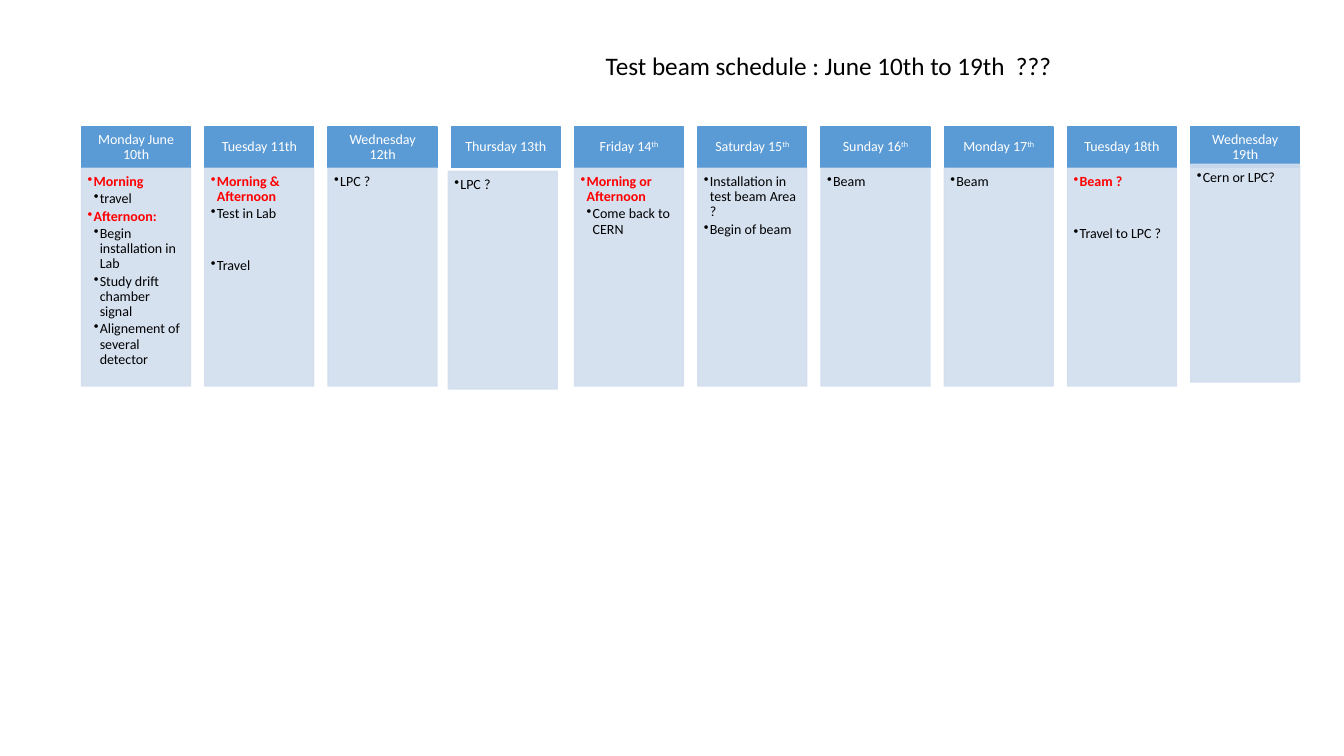
from lxml import etree
from pptx import Presentation
from pptx import util as u
from pptx.dml.color import RGBColor
from pptx.enum import shapes, text
from pptx.oxml import ns

COLORS = {"header": "5B9BD5", "body": "D2DEEF", "white": "FFFFFF",
          "black": "000000", "red": "FF0000"}
DAY_LEFT, DAY_PITCH, DAY_WIDTH = 0.81, 11 / 9, 1.08
HEADER_TOP, HEADER_HEIGHT = 1.26, 0.4
BODY_TOP, BODY_HEIGHT = 1.67, 2.16

SCHEDULE = [
    ("Monday June 10th", "", [
        ("Morning", {"heading": True}),
        ("travel", {"level": 2}),
        ("Afternoon:", {"heading": True}),
        ("Begin installation in Lab", {"level": 2}),
        ("Study drift chamber signal", {"level": 2}),
        ("Alignement of several detector", {"level": 2})]),
    ("Tuesday 11th", "", [
        ("Morning & Afternoon", {"heading": True}),
        ("Test in Lab", {}),
        ("Travel", {"before": 24.5})]),
    ("Wednesday 12th", "", [("LPC ?", {})]),
    ("Thursday 13th", "", [("LPC ?", {})]),
    ("Friday 14", "th", [
        ("Morning or Afternoon", {"heading": True}),
        ("Come back to CERN", {"level": 2})]),
    ("Saturday 15", "th", [
        ("Installation in test beam Area ?", {}),
        ("Begin of beam", {})]),
    ("Sunday 16", "th", [("Beam", {})]),
    ("Monday 17", "th", [("Beam", {})]),
    ("Tuesday 18th", "", [
        ("Beam ?", {"heading": True}),
        ("Travel to LPC ?", {"before": 24.5})]),
    ("Wednesday 19th", "", [("Cern or LPC?", {})]),
]
BODY_SHIFTS = {"Thursday 13th": (-0.03, 0.03), "Wednesday 19th": (0, -0.04)}


def write(paragraph, wording, size=10, color="black", bold=False, suffix="",
          align=text.PP_ALIGN.LEFT, spacing=0.9, before=0, after=1.6, level=0):
    paragraph.alignment = align
    paragraph.line_spacing = spacing
    paragraph.space_before = u.Pt(before)
    paragraph.space_after = u.Pt(after)
    for part in filter(None, (wording, suffix)):
        run = paragraph.add_run()
        run.text = part
        run.font.size = u.Pt(size)
        run.font.name = "Calibri"
        run.font.bold = bold
        run.font.color.rgb = RGBColor.from_string(COLORS[color])
        if part == suffix:
            run.font._element.set("baseline", "30000")
    if level:
        properties = paragraph._p.get_or_add_pPr()
        properties.set("marL", str(u.Inches(0.06 * level)))
        properties.set("indent", str(-u.Inches(0.06)))
        etree.SubElement(properties, ns.qn("a:buChar")).set("char", "••")


def add_box(group, left, top, height, color, margins, anchor):
    box = group.shapes.add_shape(
        shapes.MSO_SHAPE.RECTANGLE, u.Inches(left), u.Inches(top),
        u.Inches(DAY_WIDTH), u.Inches(height))
    box.shadow.inherit = False
    box.fill.solid()
    box.fill.fore_color.rgb = RGBColor.from_string(COLORS[color])
    box.line.color.rgb = RGBColor.from_string(COLORS[color])
    box.line.width = u.Pt(1)
    frame = box.text_frame
    frame.word_wrap = True
    frame.vertical_anchor = anchor
    (frame.margin_left, frame.margin_top,
     frame.margin_right, frame.margin_bottom) = map(u.Inches, margins)
    return box


deck = Presentation()
deck.slide_width, deck.slide_height = u.Inches(13.33), u.Inches(7.5)
slide = deck.slides.add_slide(deck.slide_layouts[6])
calendar = slide.shapes.add_group_shape()

for column, (day, ordinal, activities) in enumerate(SCHEDULE):
    left = DAY_LEFT + column * DAY_PITCH
    header = add_box(calendar, left, HEADER_TOP, HEADER_HEIGHT, "header",
                     (0.08, 0.04, 0.08, 0.04), text.MSO_ANCHOR.MIDDLE)
    write(header.text_frame.paragraphs[0], day, suffix=ordinal, color="white",
          align=text.PP_ALIGN.CENTER, after=3.5)

    shift_x, shift_y = BODY_SHIFTS.get(day, (0, 0))
    body = add_box(calendar, left + shift_x, BODY_TOP + shift_y, BODY_HEIGHT,
                   "body", (0.06, 0.06, 0.08, 0.09), text.MSO_ANCHOR.TOP)
    for tint in body._element.spPr.iter(ns.qn("a:srgbClr")):
        etree.SubElement(tint, ns.qn("a:alpha")).set("val", "90000")
    for row, (activity, style) in enumerate(activities):
        frame = body.text_frame
        line = frame.add_paragraph() if row else frame.paragraphs[0]
        heading = style.get("heading", False)
        write(line, activity, color="red" if heading else "black", bold=heading,
              level=style.get("level", 1), before=style.get("before", 0))

title = slide.shapes.add_textbox(
    u.Inches(5.91), u.Inches(0.45), u.Inches(4.74), u.Inches(0.4))
title.text_frame.word_wrap = False
title.text_frame.auto_size = text.MSO_AUTO_SIZE.SHAPE_TO_FIT_TEXT
write(title.text_frame.paragraphs[0], "Test beam schedule : June 10th to 19th  ???",
      size=18, spacing=1.0, after=0)

deck.save("out.pptx")
